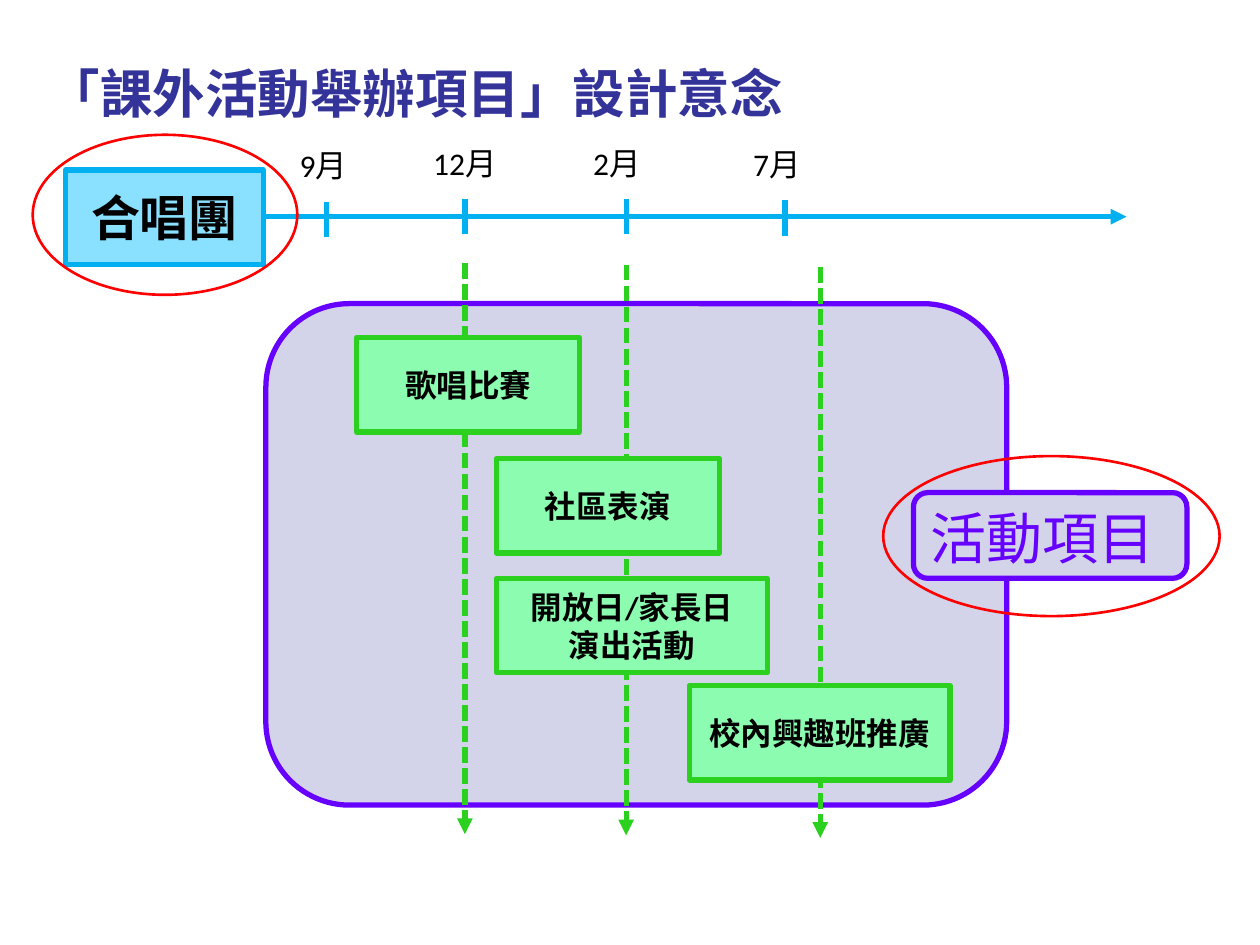
from typing import NamedTuple, Optional

from lxml.etree import SubElement
from pptx import Presentation
from pptx.dml.color import RGBColor
from pptx.enum.dml import MSO_LINE
from pptx.enum.shapes import MSO_CONNECTOR, MSO_SHAPE
from pptx.enum.text import MSO_ANCHOR, PP_ALIGN
from pptx.oxml.ns import qn
from pptx.util import Inches, Pt

BLUE, GREEN, PURPLE, RED = "00B0F0", "2CD11F", "6600FF", "FF0000"
PALE_BLUE, PALE_GREEN, LAVENDER = "89E0FF", "8CFCB1", "D3D3E9"
BLACK, NAVY = "000000", "333399"


class Frame(NamedTuple):
    left: float
    top: float
    width: float
    height: float


class TextStyle(NamedTuple):
    size: float
    color: str = BLACK
    bold: bool = False
    font: str = "Calibri"
    alignment: PP_ALIGN = PP_ALIGN.LEFT
    line_spacing: Optional[float] = None


class Month(NamedTuple):
    label: str
    tick_x: float
    tick_top: float
    label_left: float
    label_top: float


class Activity(NamedTuple):
    text: str
    left: float
    top: float
    width: float


MONTHS = [
    Month("9月", 2.59, 1.6, 2.28, 1.11),
    Month("12月", 3.69, 1.58, 3.34, 1.09),
    Month("2月", 4.97, 1.58, 4.61, 1.09),
    Month("7月", 6.23, 1.59, 5.88, 1.1),
]
ACTIVITIES = [
    Activity("歌唱比賽", 2.83, 2.68, 1.77),
    Activity("社區表演", 3.94, 3.64, 1.77),
    Activity("開放日/家長日\n演出活動", 3.94, 4.59, 2.15),
    Activity("校內興趣班推廣", 5.47, 5.44, 2.07),
]
GUIDES = [(4.97, 2.1), (3.69, 2.09), (6.51, 2.12)]
GUIDE_LENGTH = 4.53
TICK_LENGTH = 0.28
TIMELINE_Y = 1.72
BOX_HEIGHT = 0.75


def rgb(color: str) -> RGBColor:
    return RGBColor.from_string(color)


def write_text(shape, text: str, style: TextStyle) -> None:
    frame = shape.text_frame
    frame.word_wrap = True
    frame.text = text
    for paragraph in frame.paragraphs:
        paragraph.alignment = style.alignment
        if style.line_spacing:
            paragraph.line_spacing = style.line_spacing
        font = paragraph.font
        font.name = style.font
        font.size = Pt(style.size)
        font.bold = style.bold
        font.color.rgb = rgb(style.color)


def add_label(slide, frame: Frame, text: str, style: TextStyle):
    label = slide.shapes.add_textbox(*map(Inches, frame))
    write_text(label, text, style)
    return label


def add_panel(slide, kind: MSO_SHAPE, frame: Frame, line: str,
              fill: Optional[str] = None, line_width: float = 3):
    shape = slide.shapes.add_shape(kind, *map(Inches, frame))
    shape.shadow.inherit = False
    if fill:
        shape.fill.solid()
        shape.fill.fore_color.rgb = rgb(fill)
    else:
        shape.fill.background()
    shape.line.color.rgb = rgb(line)
    shape.line.width = Pt(line_width)
    return shape


def add_line(slide, start: tuple[float, float], end: tuple[float, float],
             color: str, dashed: bool = False, arrow: bool = False) -> None:
    connector = slide.shapes.add_connector(
        MSO_CONNECTOR.STRAIGHT, *map(Inches, start + end))
    connector.line.color.rgb = rgb(color)
    connector.line.width = Pt(3)
    if dashed:
        connector.line.dash_style = MSO_LINE.SQUARE_DOT
    if arrow:
        line = connector._element.spPr.find(qn("a:ln"))
        SubElement(line, qn("a:tailEnd"), type="triangle")
    SubElement(connector._element.spPr, qn("a:effectLst"))


def add_box(slide, frame: Frame, text: str, size: float, line: str, fill: str) -> None:
    box = add_panel(slide, MSO_SHAPE.RECTANGLE, frame, line, fill)
    box.text_frame.vertical_anchor = MSO_ANCHOR.MIDDLE
    write_text(box, text, TextStyle(size, bold=True, alignment=PP_ALIGN.CENTER))


def add_month(slide, month: Month) -> None:
    add_line(slide, (month.tick_x, month.tick_top),
             (month.tick_x, month.tick_top + TICK_LENGTH), BLUE)
    label = add_label(slide, Frame(month.label_left, month.label_top, 0.76, 0.4),
                      month.label, TextStyle(18))
    label.text_frame.margin_right = Inches(0)


def main() -> None:
    presentation = Presentation()
    presentation.slide_width = Inches(10)
    presentation.slide_height = Inches(7.5)
    slide = presentation.slides.add_slide(presentation.slide_layouts[6])

    add_panel(slide, MSO_SHAPE.ROUNDED_RECTANGLE, Frame(2.11, 2.41, 5.88, 3.98),
              PURPLE, LAVENDER)
    for x, top in GUIDES:
        add_line(slide, (x, top), (x, top + GUIDE_LENGTH), GREEN, dashed=True, arrow=True)

    add_box(slide, Frame(0.52, 1.35, 1.57, BOX_HEIGHT), "合唱團", 28, BLUE, PALE_BLUE)
    add_line(slide, (2.09, TIMELINE_Y), (8.94, TIMELINE_Y), BLUE, arrow=True)
    for month in MONTHS:
        add_month(slide, month)
    for activity in ACTIVITIES:
        frame = Frame(activity.left, activity.top, activity.width, BOX_HEIGHT)
        add_box(slide, frame, activity.text, 18, GREEN, PALE_GREEN)

    caption = add_panel(slide, MSO_SHAPE.ROUNDED_RECTANGLE, Frame(7.25, 3.91, 2.17, 0.68),
                        PURPLE, LAVENDER)
    caption.text_frame.vertical_anchor = MSO_ANCHOR.TOP
    write_text(caption, "活動項目", TextStyle(32, PURPLE))

    title = add_label(slide, Frame(0.31, 0.19, 6.69, 0.83), "「課外活動舉辦項目」設計意念",
                      TextStyle(30, NAVY, True, "Karla", line_spacing=1.5))
    title.text_frame.margin_left = title.text_frame.margin_right = Inches(0.07)
    title.text_frame.margin_top = title.text_frame.margin_bottom = Inches(0.04)

    for frame in (Frame(0.26, 1.07, 2.1, 1.27), Frame(7.01, 3.62, 2.67, 1.27)):
        add_panel(slide, MSO_SHAPE.OVAL, frame, RED, line_width=1.5)

    presentation.save("out.pptx")


if __name__ == "__main__":
    main()
